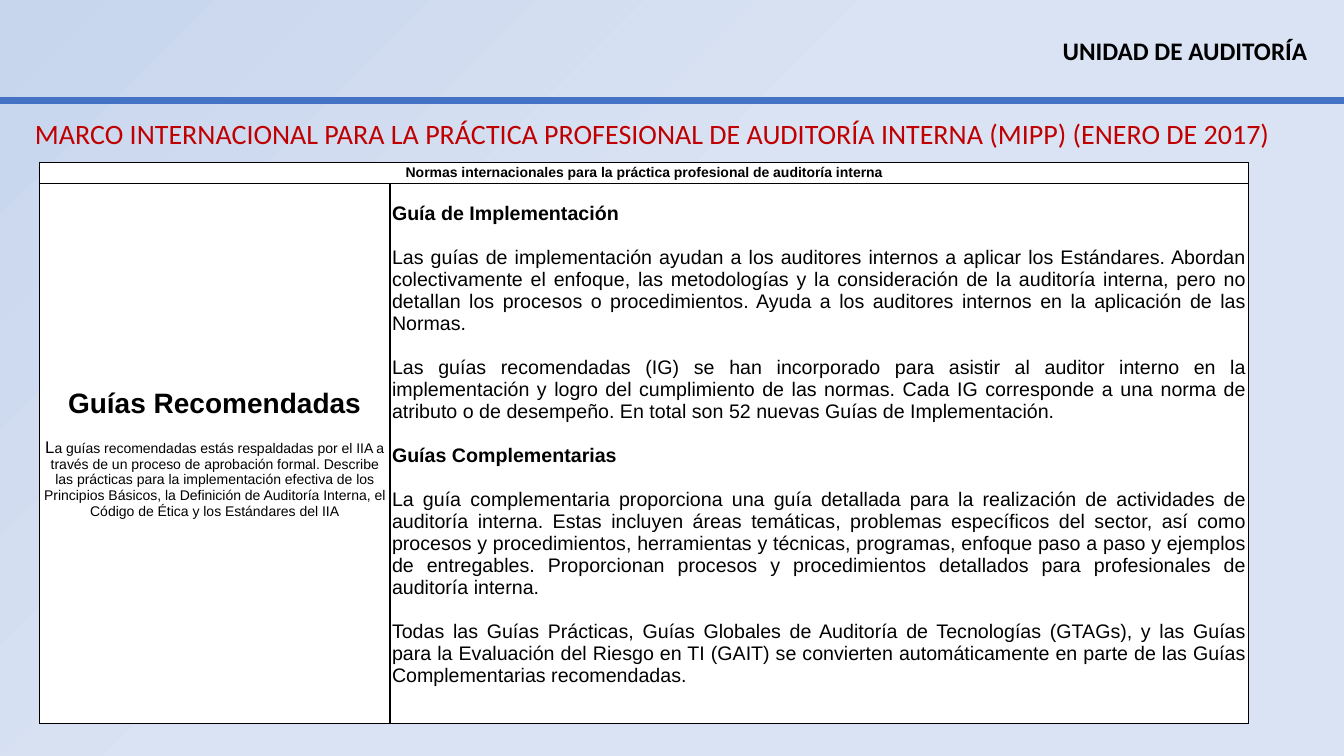
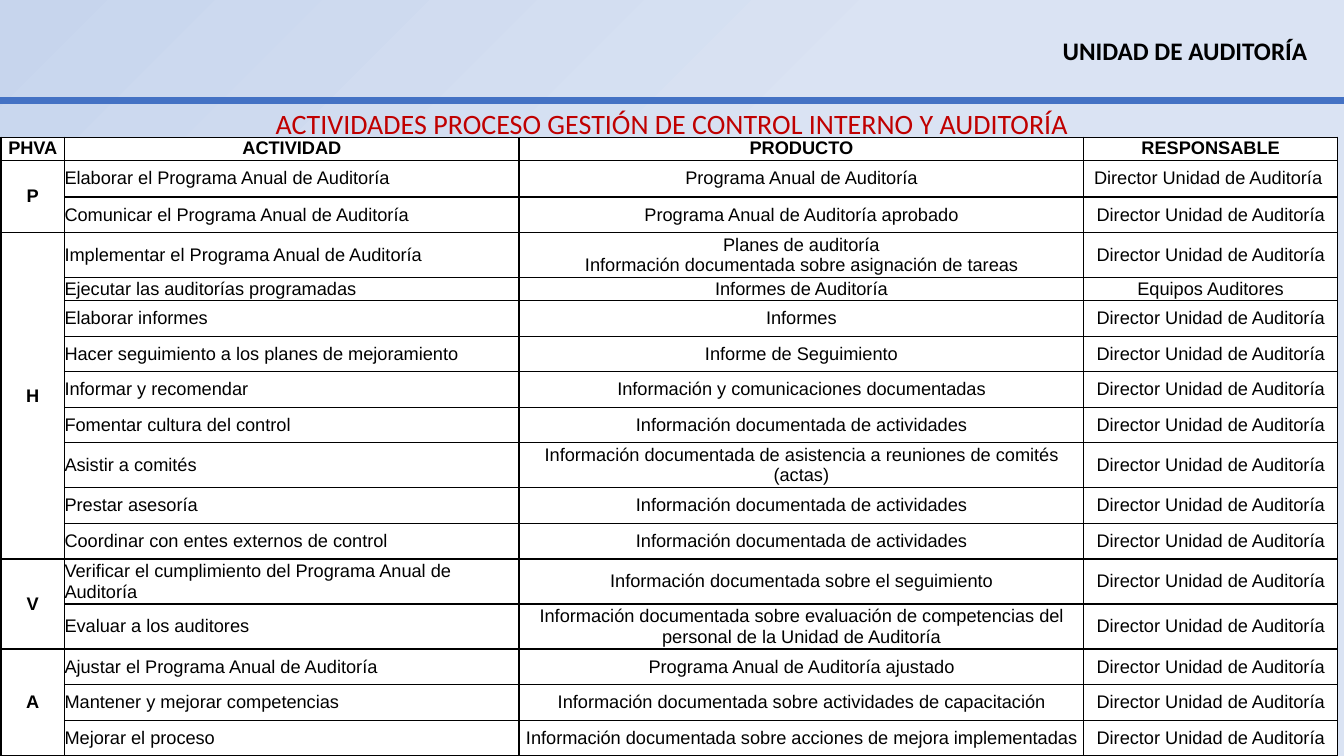
from dataclasses import dataclass

from lxml import etree
from pptx import Presentation
from pptx import util as u
from pptx.dml.color import RGBColor
from pptx.enum import shapes, text
from pptx.oxml import ns

Pt = u.Pt
LEFT, CENTER, JUSTIFY = text.PP_ALIGN.LEFT, text.PP_ALIGN.CENTER, text.PP_ALIGN.JUSTIFY


@dataclass(frozen=True)
class Theme:
    ink: str = "000000"
    paper: str = "FFFFFF"
    accent: str = "4472C4"
    title: str = "C00000"
    backdrop: tuple[tuple[float, str], ...] = ((0.54, "DAE3F3"), (1, "C7D5ED"))
    heading_font: str = "Calibri"
    body_font: str = "Arial"
    title_size: float = 20
    unit_size: float = 18
    topic_size: float = 20
    lead_size: float = 12
    small_size: float = 10
    guide_size: float = 14
    activity_size: float = 13
    rule_width: float = 5
    border_width: float = 1


THEME = Theme()


@dataclass(frozen=True)
class Box:
    left: float
    top: float
    width: float
    height: float

    def lengths(self) -> tuple:
        return Pt(self.left), Pt(self.top), Pt(self.width), Pt(self.height)


@dataclass(frozen=True)
class Line:
    text: str
    size: float
    bold: bool = False
    space_before: float = 0
    tail: str = ""
    tail_size: float = 0


@dataclass(frozen=True)
class Activity:
    name: str
    product: str
    height: float = 25.4
    owner: str = "Director Unidad de Auditoría"


@dataclass(frozen=True)
class Phase:
    letter: str
    activities: tuple[Activity, ...]


SLIDE = Box(0, 0, 960, 540)
UNIT_BOX = Box(736.6, 21.6, 219.6, 28.8)
RULE_TOP = 72
HEADER_HEIGHT = 16.4
TALL = 32.2
GUIDE_GAP = 15.7

STANDARDS_LINE = Line(
    "Normas internacionales para la práctica profesional de auditoría interna", THEME.small_size, True)

TOPIC_LINES = (
    Line("Guías Recomendadas", THEME.topic_size, True),
    Line("L", THEME.lead_size, space_before=13.5, tail_size=THEME.small_size,
         tail="a guías recomendadas estás respaldadas por el IIA a través de un proceso de aprobación formal. "
              "Describe las prácticas para la implementación efectiva de los Principios Básicos, la Definición "
              "de Auditoría Interna, el Código de Ética y los Estándares del IIA"),
)

GUIDE_LINES = (
    Line("Guía de Implementación", THEME.guide_size, True),
    Line("Las guías de implementación ayudan a los auditores internos a aplicar los Estándares. Abordan "
         "colectivamente el enfoque, las metodologías y la consideración de la auditoría interna, pero no "
         "detallan los procesos o procedimientos. Ayuda a los auditores internos en la aplicación de las "
         "Normas.", THEME.guide_size, space_before=GUIDE_GAP),
    Line("Las guías recomendadas (IG) se han incorporado para asistir al auditor interno en la "
         "implementación y logro del cumplimiento de las normas. Cada IG corresponde a una norma de atributo "
         "o de desempeño. En total son 52 nuevas Guías de Implementación.",
         THEME.guide_size, space_before=GUIDE_GAP),
    Line("Guías Complementarias", THEME.guide_size, True, GUIDE_GAP),
    Line("La guía complementaria proporciona una guía detallada para la realización de actividades de "
         "auditoría interna. Estas incluyen áreas temáticas, problemas específicos del sector, así como "
         "procesos y procedimientos, herramientas y técnicas, programas, enfoque paso a paso y ejemplos de "
         "entregables. Proporcionan procesos y procedimientos detallados para profesionales de auditoría "
         "interna.", THEME.guide_size, space_before=GUIDE_GAP),
    Line("Todas las Guías Prácticas, Guías Globales de Auditoría de Tecnologías (GTAGs), y las Guías para la "
         "Evaluación del Riesgo en TI (GAIT) se convierten automáticamente en parte de las Guías "
         "Complementarias recomendadas.", THEME.guide_size, space_before=GUIDE_GAP),
)

HEADINGS = ("PHVA", "ACTIVIDAD", "PRODUCTO", "RESPONSABLE")

PHASES = (
    Phase("P", (
        Activity("Elaborar el Programa Anual de Auditoría", "Programa Anual de Auditoría",
                 26.4, "Director Unidad de Auditoría "),
        Activity("Comunicar el Programa Anual de Auditoría", "Programa Anual de Auditoría aprobado"),
    )),
    Phase("H", (
        Activity("Implementar el Programa Anual de Auditoría",
                 "Planes de auditoría\nInformación documentada sobre asignación de tareas", TALL),
        Activity("Ejecutar las auditorías programadas", "Informes de Auditoría",
                 HEADER_HEIGHT, "Equipos Auditores"),
        Activity("Elaborar informes", "Informes"),
        Activity("Hacer seguimiento a los planes de mejoramiento", "Informe de Seguimiento"),
        Activity("Informar y recomendar", "Información y comunicaciones documentadas"),
        Activity("Fomentar cultura del control", "Información documentada de actividades"),
        Activity("Asistir a comités",
                 "Información documentada de asistencia a reuniones de comités\n(actas)", TALL),
        Activity("Prestar asesoría", "Información documentada de actividades"),
        Activity("Coordinar con entes externos de control", "Información documentada de actividades"),
    )),
    Phase("V", (
        Activity("Verificar el cumplimiento del Programa Anual de Auditoría",
                 "Información documentada sobre el seguimiento", TALL),
        Activity("Evaluar a los auditores",
                 "Información documentada sobre evaluación de competencias del personal de la Unidad de "
                 "Auditoría", TALL),
    )),
    Phase("A", (
        Activity("Ajustar el Programa Anual de Auditoría", "Programa Anual de Auditoría ajustado"),
        Activity("Mantener y mejorar competencias",
                 "Información documentada sobre actividades de capacitación"),
        Activity("Mejorar el proceso", "Información documentada sobre acciones de mejora implementadas"),
    )),
)


def rgb(value: str) -> RGBColor:
    return RGBColor.from_string(value)


def format_run(run, size: float, color: str, font_name: str, bold: bool = False) -> None:
    run.font.size = Pt(size)
    run.font.bold = bold
    run.font.name = font_name
    run.font.color.rgb = rgb(color)


def write_label(shape, label: str, size: float, color: str, bold: bool = False, wrap: bool = True) -> None:
    frame = shape.text_frame
    frame.text = label
    frame.word_wrap = wrap
    frame.auto_size = text.MSO_AUTO_SIZE.SHAPE_TO_FIT_TEXT
    frame.paragraphs[0].alignment = CENTER
    format_run(frame.paragraphs[0].runs[0], size, color, THEME.heading_font, bold)


def paint_background(layout) -> None:
    fill = layout.background.fill
    fill.gradient()
    for stop, (position, color) in zip(fill.gradient_stops, THEME.backdrop):
        stop.position = position
        stop.color.rgb = rgb(color)
    gradient = layout.element.find(".//" + ns.qn("a:gradFill"))
    for linear in gradient.findall(ns.qn("a:lin")):
        gradient.remove(linear)
    radial = etree.SubElement(gradient, ns.qn("a:path"), {"path": "circle"})
    etree.SubElement(radial, ns.qn("a:fillToRect"), l="100000", t="100000")


def build_layout(layout, slide) -> None:
    paint_background(layout)
    unit_name = slide.shapes.add_textbox(*UNIT_BOX.lengths())
    write_label(unit_name, "UNIDAD DE AUDITORÍA", THEME.unit_size, THEME.ink, True)
    rule = slide.shapes.add_connector(
        shapes.MSO_CONNECTOR.STRAIGHT, Pt(0), Pt(RULE_TOP), Pt(SLIDE.width), Pt(RULE_TOP))
    rule.line.color.rgb = rgb(THEME.accent)
    rule.line.width = Pt(THEME.rule_width)
    etree.SubElement(rule.element.spPr, ns.qn("a:effectLst"))
    for number, shape in enumerate((unit_name, rule), start=20):
        shape.element.find(".//" + ns.qn("p:cNvPr")).set("id", str(number))
        layout.shapes.element.append(shape.element)


def place_title(slide, title: str, box: Box, wrap: bool = True) -> None:
    shape = slide.shapes.title
    shape.left, shape.top, shape.width, shape.height = box.lengths()
    write_label(shape, title, THEME.title_size, THEME.title, wrap=wrap)


def add_grid(slide, left: float, top: float, widths: tuple[float, ...], heights: list[float], margin: float):
    box = Box(left, top, sum(widths), sum(heights))
    table = slide.shapes.add_table(len(heights), len(widths), *box.lengths()).table
    table.first_row = table.horz_banding = False
    for column, width in zip(table.columns, widths):
        column.width = Pt(width)
    for row, height in zip(table.rows, heights):
        row.height = Pt(height)
    for cell in table.iter_cells():
        style_cell(cell, margin)
    return table


def style_cell(cell, margin: float) -> None:
    properties = cell._tc.get_or_add_tcPr()
    for side in ("a:lnL", "a:lnR", "a:lnT", "a:lnB"):
        border = etree.SubElement(properties, ns.qn(side), w=str(Pt(THEME.border_width)))
        solid = etree.SubElement(border, ns.qn("a:solidFill"))
        etree.SubElement(solid, ns.qn("a:srgbClr"), val=THEME.ink)
    cell.fill.solid()
    cell.fill.fore_color.rgb = rgb(THEME.paper)
    cell.vertical_anchor = text.MSO_ANCHOR.MIDDLE
    cell.margin_left = cell.margin_right = cell.margin_top = cell.margin_bottom = Pt(margin)


def write_cell(cell, lines: tuple[Line, ...], alignment=CENTER) -> None:
    frame = cell.text_frame
    frame.text = "\n".join(line.text for line in lines)
    for paragraph, line in zip(frame.paragraphs, lines):
        paragraph.alignment = alignment
        if line.space_before:
            paragraph.space_before = Pt(line.space_before)
        format_run(paragraph.runs[0], line.size, THEME.ink, THEME.body_font, line.bold)
        if line.tail:
            run = paragraph.add_run()
            run.text = line.tail
            format_run(run, line.tail_size, THEME.ink, THEME.body_font, line.bold)


def write_activity_cell(cell, content: str, bold: bool = False, alignment=CENTER) -> None:
    lines = tuple(Line(part, THEME.activity_size, bold) for part in content.split("\n"))
    write_cell(cell, lines, alignment)


def build_framework(slide) -> None:
    place_title(
        slide, "MARCO INTERNACIONAL PARA LA PRÁCTICA PROFESIONAL DE AUDITORÍA INTERNA (MIPP) (ENERO DE 2017)",
        Box(14.4, 79.2, 903.6, 31.7), wrap=False)
    table = add_grid(slide, 28, 116, (250.6, 613.4), [14.4, 386], 1.44)
    table.cell(0, 0).merge(table.cell(0, 1))
    write_cell(table.cell(0, 0), (STANDARDS_LINE,))
    write_cell(table.cell(1, 0), TOPIC_LINES)
    write_cell(table.cell(1, 1), GUIDE_LINES, JUSTIFY)
    table.cell(1, 1).margin_bottom = Pt(13.5)


def build_activities(slide) -> None:
    place_title(slide, "ACTIVIDADES PROCESO GESTIÓN DE CONTROL INTERNO Y AUDITORÍA",
                Box(0, RULE_TOP, SLIDE.width, 31.7))
    heights = [HEADER_HEIGHT] + [activity.height for phase in PHASES for activity in phase.activities]
    table = add_grid(slide, 0.7, 98, (45.4, 324.7, 403.2, 181.4), heights, 0)
    for column, heading in enumerate(HEADINGS):
        write_activity_cell(table.cell(0, column), heading, True)
    row = 1
    for phase in PHASES:
        table.cell(row, 0).merge(table.cell(row + len(phase.activities) - 1, 0))
        write_activity_cell(table.cell(row, 0), phase.letter, True)
        for activity in phase.activities:
            write_activity_cell(table.cell(row, 1), activity.name, alignment=LEFT)
            write_activity_cell(table.cell(row, 2), activity.product)
            write_activity_cell(table.cell(row, 3), activity.owner)
            row += 1


def main() -> None:
    presentation = Presentation()
    presentation.slide_width, presentation.slide_height = Pt(SLIDE.width), Pt(SLIDE.height)
    layout = presentation.slide_layouts.get_by_name("Title Only")
    framework, activities = (presentation.slides.add_slide(layout) for _ in range(2))
    build_layout(layout, framework)
    build_framework(framework)
    build_activities(activities)
    presentation.save("out.pptx")


if __name__ == "__main__":
    main()
